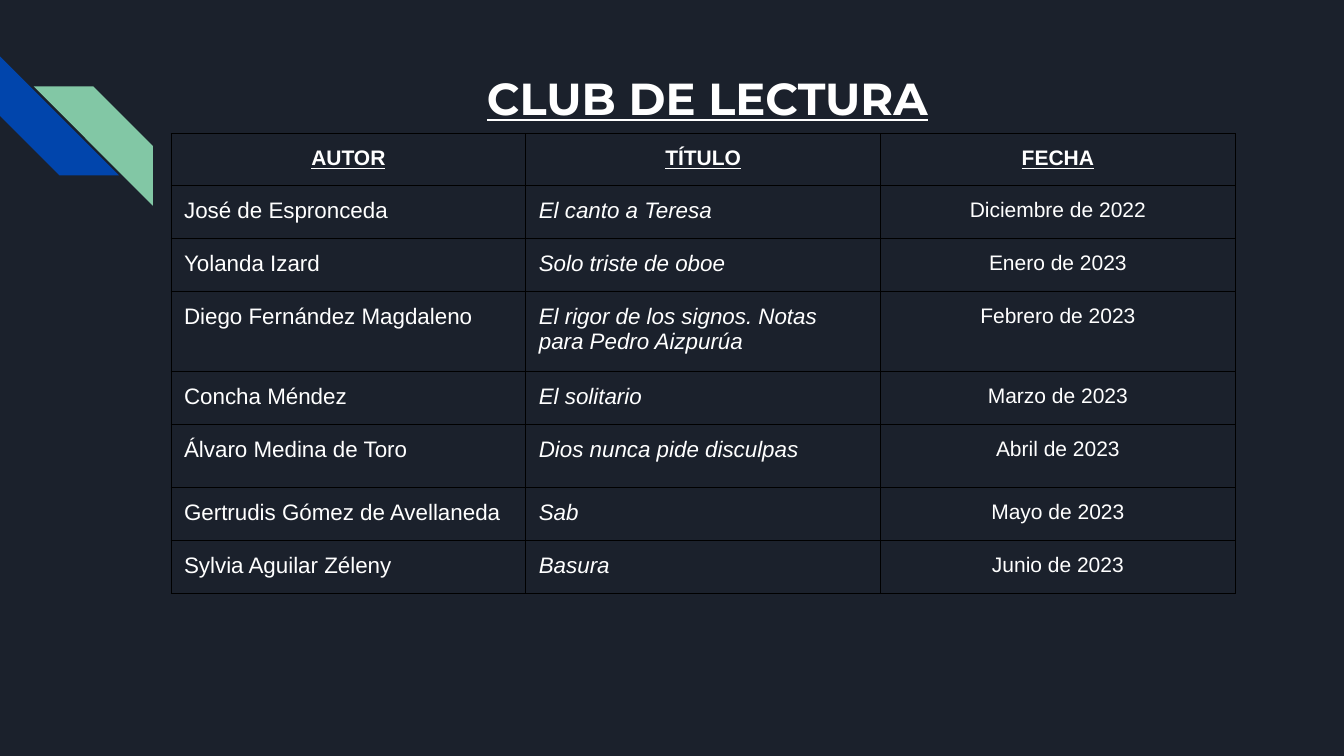
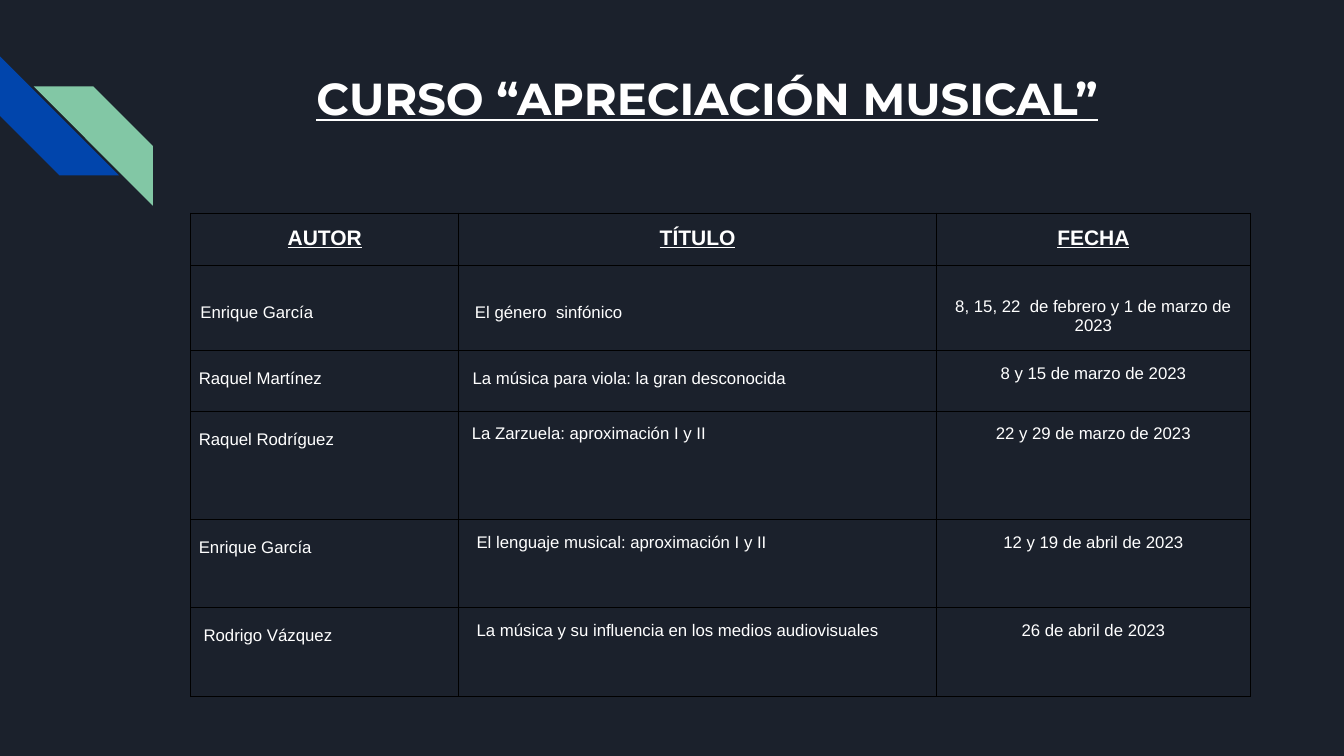
from dataclasses import dataclass

from lxml.etree import SubElement
from pptx import Presentation
from pptx.dml.color import RGBColor
from pptx.enum.shapes import MSO_SHAPE
from pptx.enum.text import PP_ALIGN
from pptx.oxml.ns import qn
from pptx.util import Cm, Pt

# Shared style
NIGHT, BLUE, GREEN = "1B212C", "0145AC", "82C7A5"
WHITE, BLACK = "FFFFFF", "000000"
TITLE_FONT, BODY_FONT = "Montserrat", "Arial"
INSET = 0.33
HEADINGS = ("AUTOR", "TÍTULO", "FECHA")


@dataclass
class Entry:
    """Text of one table cell with its left and top insets in cm."""
    text: str
    left: float = INSET
    top: float = INSET


@dataclass
class Style:
    """Text style of one table column."""
    size: int
    align: PP_ALIGN = PP_ALIGN.LEFT
    bold: bool = False
    italic: bool = False
    underline: bool = False


HEADING_STYLE = Style(15, PP_ALIGN.CENTER, bold=True, underline=True)

READING_STYLES = (Style(16), Style(16, italic=True), Style(15, PP_ALIGN.CENTER))
READINGS = [
    ("José de Espronceda", "El canto a Teresa", "Diciembre de 2022"),
    ("Yolanda Izard", "Solo triste de oboe", "Enero de 2023"),
    ("Diego Fernández Magdaleno",
     "El rigor de los signos. Notas para Pedro Aizpurúa", "Febrero de 2023"),
    ("Concha Méndez", "El solitario", "Marzo de 2023"),
    ("Álvaro Medina de Toro", "Dios nunca pide disculpas", "Abril de 2023"),
    ("Gertrudis Gómez de Avellaneda", "Sab", "Mayo de 2023"),
    ("Sylvia Aguilar Zéleny", "Basura", "Junio de 2023"),
]

COURSE_STYLES = (Style(12), Style(12), Style(12, PP_ALIGN.CENTER))
COURSES = [
    (Entry("Enrique García", 0.24, 0.95),
     Entry("El género  sinfónico", 0.41, 0.95),
     Entry("8, 15, 22  de febrero y 1 de marzo de 2023", top=0.8)),
    (Entry("Raquel Martínez", 0.2, 0.47),
     Entry("La música para viola: la gran desconocida", 0.35, 0.47),
     "8 y 15 de marzo de 2023"),
    (Entry("Raquel Rodríguez", 0.2, 0.47),
     "La Zarzuela: aproximación I y II",
     "22 y 29 de marzo de 2023"),
    (Entry("Enrique García", 0.2, 0.47),
     Entry("El lenguaje musical: aproximación I y II", 0.45),
     "12 y 19 de abril de 2023"),
    (Entry("Rodrigo Vázquez", 0.32, 0.47),
     Entry("La música y su influencia en los medios audiovisuales", 0.45),
     "26 de abril de 2023"),
]


def color(value):
    return RGBColor.from_string(value)


def set_insets(frame, left=INSET, top=INSET):
    frame.margin_left, frame.margin_top = Cm(left), Cm(top)
    frame.margin_right = frame.margin_bottom = Cm(INSET)


def add_stripe(page, left, top, fill, rotation):
    stripe = page.shapes.add_shape(
        MSO_SHAPE.DIAGONAL_STRIPE, Cm(left), Cm(top), Cm(3), Cm(3))
    stripe.rotation = rotation
    stripe.shadow.inherit = False
    stripe.fill.solid()
    stripe.fill.fore_color.rgb = color(fill)
    stripe.line.fill.background()


def add_title(page, text):
    box = page.shapes.add_textbox(Cm(4.8), Cm(1.45), Cm(26.06), Cm(1.9))
    frame = box.text_frame
    frame.word_wrap = True
    set_insets(frame)
    para = frame.paragraphs[0]
    para.text = text
    para.alignment = PP_ALIGN.CENTER
    font = para.font
    font.name, font.size = TITLE_FONT, Pt(32)
    font.bold = font.underline = True
    font.color.rgb = color(WHITE)


def add_page(deck, title):
    page = deck.slides.add_slide(deck.slide_layouts[6])
    add_stripe(page, 0, 1.42, BLUE, 270)
    add_stripe(page, 0.85, 2.18, GREEN, 90)
    add_title(page, title)
    return page


def add_borders(cell):
    properties = cell._tc.get_or_add_tcPr()
    for side in ("a:lnL", "a:lnR", "a:lnT", "a:lnB"):
        line = SubElement(properties, qn(side), w=str(Pt(0.75)))
        fill = SubElement(line, qn("a:solidFill"))
        SubElement(fill, qn("a:srgbClr"), val=BLACK)


def fill_cell(cell, entry, style):
    if isinstance(entry, str):
        entry = Entry(entry)
    add_borders(cell)
    cell.fill.background()
    set_insets(cell, entry.left, entry.top)
    para = cell.text_frame.paragraphs[0]
    para.text = entry.text
    para.alignment = style.align
    font = para.font
    font.name, font.size = BODY_FONT, Pt(style.size)
    font.bold, font.italic = style.bold, style.italic
    font.underline = style.underline
    font.color.rgb = color(WHITE)


def add_schedule(page, left, top, widths, heights, entries, styles):
    frame = page.shapes.add_table(
        len(heights), len(widths), Cm(left), Cm(top),
        Cm(sum(widths)), Cm(sum(heights)))
    table = frame.table
    table.horz_banding = table.first_row = False
    for column, width in zip(table.columns, widths):
        column.width = Cm(width)
    for row, height in zip(table.rows, heights):
        row.height = Cm(height)
    # Headings first, then one row per entry
    for number, texts in enumerate([HEADINGS, *entries]):
        row_styles = styles if number else [HEADING_STYLE] * len(HEADINGS)
        for cell, text, style in zip(table.rows[number].cells, texts, row_styles):
            fill_cell(cell, text, style)


def main():
    deck = Presentation()
    deck.slide_width, deck.slide_height = Cm(33.87), Cm(19.05)
    background = deck.slide_master.background.fill
    background.solid()
    background.fore_color.rgb = color(NIGHT)

    # Reading club
    page = add_page(deck, "CLUB DE LECTURA")
    add_schedule(page, 4.31, 3.37, [8.94] * 3,
                 [1.26, 1.3, 1.3, 1.92, 1.3, 1.58, 1.3, 1.3],
                 READINGS, READING_STYLES)

    # Music course
    page = add_page(deck, "CURSO “APRECIACIÓN MUSICAL”")
    add_schedule(page, 4.81, 5.37, [6.75, 12.04, 7.91],
                 [1.32, 2.09, 1.53, 2.73, 2.22, 2.22],
                 COURSES, COURSE_STYLES)

    deck.save("out.pptx")


if __name__ == "__main__":
    main()
